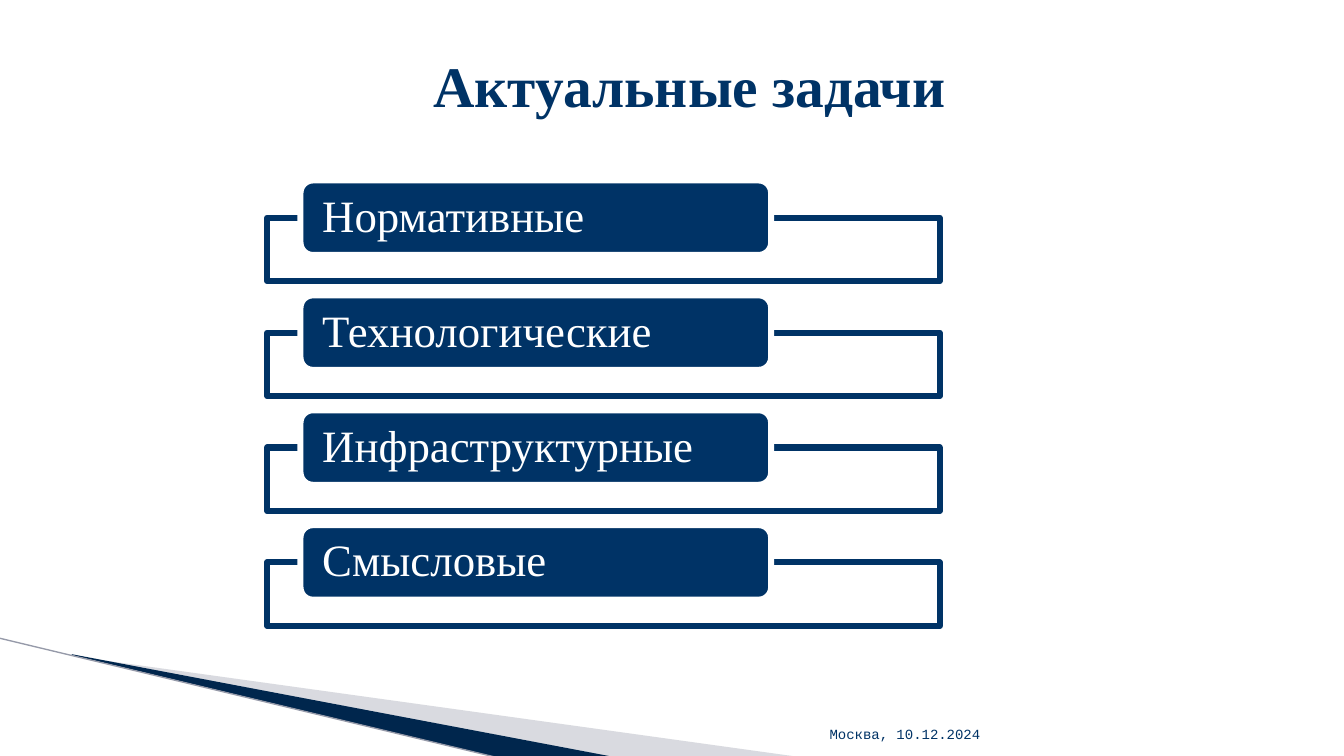
import pptx
import pptx.dml.color
import pptx.enum.shapes
import pptx.enum.text
import pptx.oxml
import pptx.oxml.ns
import pptx.util

Inches = pptx.util.Inches
SHAPE = pptx.enum.shapes.MSO_SHAPE
ANCHOR = pptx.enum.text.MSO_ANCHOR
ALIGN = pptx.enum.text.PP_ALIGN

NAVY = "003366"
DARK_NAVY = "00264D"
WHITE = "FFFFFF"
GREY = "A0A4B2"
LINE_GREY = "969AA9"

TASKS = ["Нормативные", "Технологические", "Инфраструктурные", "Смысловые"]
TASK_PITCH = 1.14


def color(value):
    return pptx.dml.color.RGBColor.from_string(value)


def apply_format(target, values):
    for name, value in values.items():
        setattr(target, name, value)


def paint(shape, fill, opacity=100, line=None):
    shape.shadow.inherit = False
    shape.fill.solid()
    shape.fill.fore_color.rgb = color(fill)
    if opacity < 100:
        tint = shape.fill._xPr.find(".//" + pptx.oxml.ns.qn("a:srgbClr"))
        alpha = pptx.oxml.parse_xml(
            f'<a:alpha {pptx.oxml.ns.nsdecls("a")} val="{opacity * 1000}"/>')
        tint.append(alpha)
    if line:
        shape.line.color.rgb = color(line)
        shape.line.width = pptx.util.Pt(4.33)
    else:
        shape.line.fill.background()


def write(shape, text, frame_format, para_format, font_format, font_color):
    frame = shape.text_frame
    apply_format(frame, {"word_wrap": True, **frame_format})
    para = frame.paragraphs[0]
    apply_format(para, para_format)
    span = para.add_run()
    span.text = text
    apply_format(span.font, font_format)
    span.font.color.rgb = color(font_color)


def add_text(page, box, text, anchor, alignment, font_format):
    shape = page.shapes.add_textbox(*map(Inches, box))
    write(shape, text, {"vertical_anchor": anchor}, {"alignment": alignment},
          font_format, NAVY)


def add_wedge(page, points, fill, opacity=100):
    corners = [(Inches(x), Inches(y)) for x, y in points]
    builder = page.shapes.build_freeform(*corners[0])
    builder.add_line_segments(corners[1:], close=True)
    paint(builder.convert_to_shape(), fill, opacity)


def add_corner_decoration(page, left, top):
    def place(points):
        return [(left + x, top + y) for x, y in points]

    add_wedge(page, place([(0.73, 0.18), (7.93, 1.18), (6.08, 1.18), (0.73, 0.17)]),
              GREY, 40)
    add_wedge(page, place([(0.71, 0.16), (6.09, 1.18), (4.96, 1.19), (0.72, 0.17)]),
              DARK_NAVY)
    (x1, y1), (x2, y2) = place([(-0.01, 0), (4.95, 1.19)])
    edge = page.shapes.add_connector(
        pptx.enum.shapes.MSO_CONNECTOR.STRAIGHT, *map(Inches, (x1, y1, x2, y2)))
    edge.line.color.rgb = color(LINE_GREY)
    edge.line.width = pptx.util.Pt(0.95)
    edge._element.spPr.append(
        pptx.oxml.parse_xml(f'<a:effectLst {pptx.oxml.ns.nsdecls("a")}/>'))


def add_task(page, left, top, width, text):
    frame = page.shapes.add_shape(
        SHAPE.RECTANGLE, *map(Inches, (left, top + 0.37, width, 0.63)))
    paint(frame, WHITE, 90, NAVY)
    label = page.shapes.add_shape(
        SHAPE.ROUNDED_RECTANGLE,
        *map(Inches, (left + 0.33, top, width * 0.7, 0.74)))
    paint(label, NAVY, line=WHITE)
    write(label, text,
          {"vertical_anchor": ANCHOR.MIDDLE, "margin_left": Inches(0.18),
           "margin_right": Inches(0.18), "margin_top": 0, "margin_bottom": 0},
          {"alignment": ALIGN.LEFT, "line_spacing": 0.9},
          {"name": "Times New Roman", "size": pptx.util.Pt(32)}, WHITE)


def add_task_list(page, left, top, width):
    for index, task in enumerate(TASKS):
        add_task(page, left, top + index * TASK_PITCH, width, task)


def main():
    deck = pptx.Presentation()
    deck.slide_width = Inches(13.33)
    deck.slide_height = Inches(7.5)
    page = deck.slides.add_slide(deck.slide_layouts[6])
    add_corner_decoration(page, 0, 6.33)
    add_text(page, (2.34, 0.21, 9, 1.25), "Актуальные задачи", ANCHOR.MIDDLE,
             ALIGN.CENTER, {"name": "Times New Roman", "bold": True,
                            "size": pptx.util.Pt(41)})
    add_text(page, (6.39, 7.01, 3.43, 0.4), "Москва, 10.12.2024", ANCHOR.BOTTOM,
             ALIGN.RIGHT, {"name": "Courier New", "size": pptx.util.Pt(10)})
    add_task_list(page, 2.65, 1.79, 6.67)
    deck.save("out.pptx")


if __name__ == "__main__":
    main()
